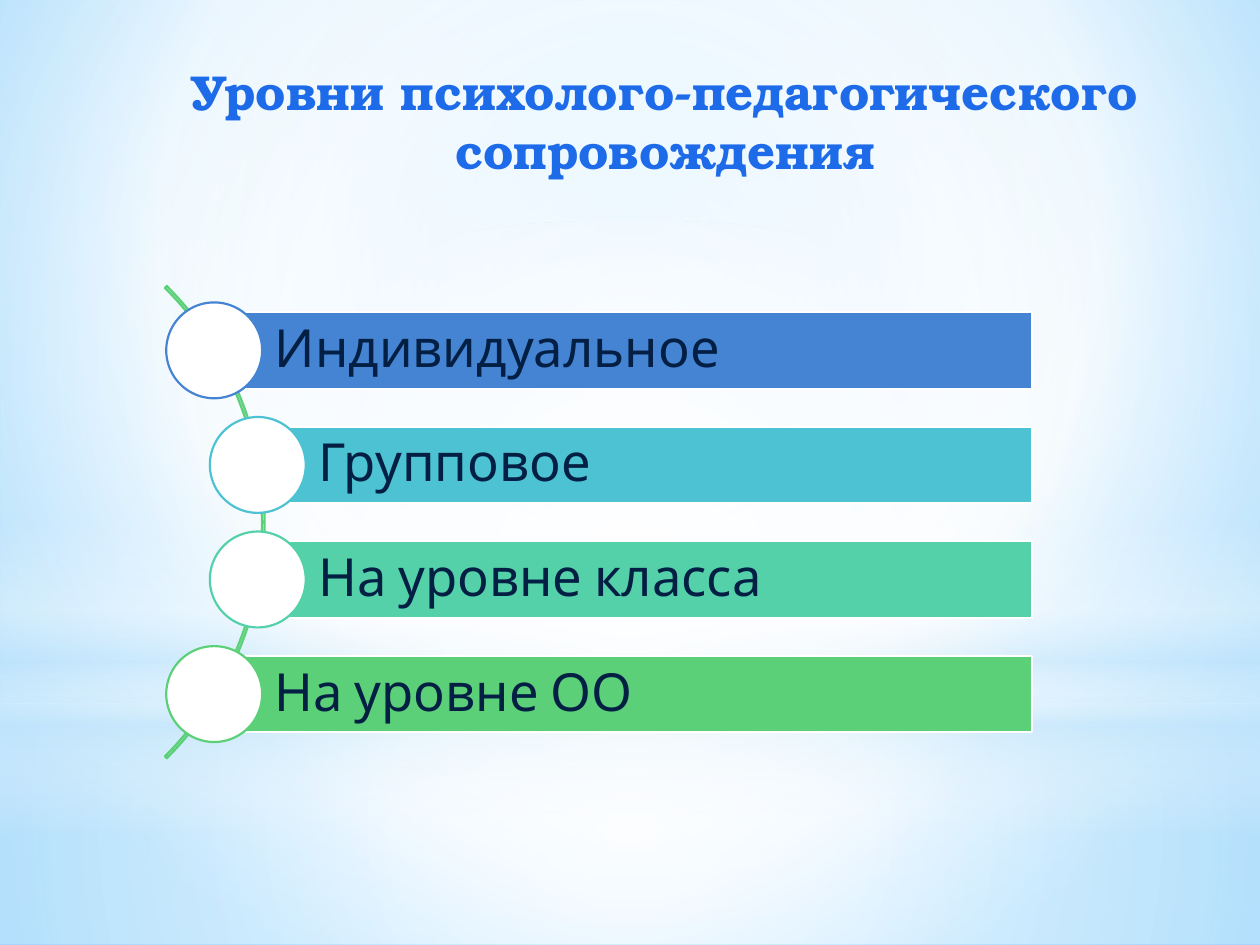
from dataclasses import dataclass

from pptx import Presentation, oxml
from pptx.dml.color import RGBColor
from pptx.enum import shapes, text
from pptx.oxml import ns
from pptx.util import Pt


@dataclass(frozen=True)
class Theme:
    """Colours, fonts and type sizes of the deck."""
    white: str = "FFFFFF"
    haze: str = "C6E7FC"
    sky: str = "B0E0FF"
    deep_sky: str = "6BC5FF"
    title: str = "1D6BE8"
    ink: str = "041F44"
    levels: tuple = ("4584D3", "4CC2D2", "54D1A9", "5BD078")
    title_font: str = "TeX Gyre Bonum"
    body_font: str = "Cabin"
    title_size: int = 28
    body_size: int = 30
    line_width: float = 1.25


@dataclass(frozen=True)
class Box:
    """A rectangle in points."""
    left: float
    top: float
    width: float
    height: float

    def lengths(self):
        """Return the four sides as slide lengths."""
        return [Pt(side) for side in (self.left, self.top, self.width, self.height)]


THEME = Theme()
PAGE = Box(0, 0, 720, 540)
CENTRE = (50, 50, 50, 50)


def paint_gradient(holder, stops, focus=None):
    """Give a shape or slide a radial gradient, or a vertical one without focus."""
    holder_fill = holder.background.fill if hasattr(holder, "background") else holder.fill
    holder_fill.background()
    marks = "".join(
        f'<a:gs pos="{place * 1000}"><a:srgbClr val="{color}">'
        f'<a:alpha val="{opacity * 1000}"/></a:srgbClr></a:gs>'
        for place, color, opacity in stops)
    if focus:
        sides = " ".join(f'{side}="{value * 1000}"' for side, value in zip("ltrb", focus))
        course = f'<a:path path="circle"><a:fillToRect {sides}/></a:path>'
    else:
        course = '<a:lin ang="5400000" scaled="0"/>'
    gradient = oxml.parse_xml(
        f'<a:gradFill {ns.nsdecls("a")} rotWithShape="1">'
        f'<a:gsLst>{marks}</a:gsLst>{course}</a:gradFill>')
    empty = holder.element.find(".//" + ns.qn("a:noFill"))
    empty.getparent().replace(empty, gradient)


def add_outlined(group, kind, box, fill, line):
    """Add a flat shape with an outline and an optional fill."""
    shape = group.shapes.add_shape(kind, *box.lengths())
    shape.shadow.inherit = False
    if fill:
        shape.fill.solid()
        shape.fill.fore_color.rgb = RGBColor.from_string(fill)
    else:
        shape.fill.background()
    shape.line.color.rgb = RGBColor.from_string(line)
    shape.line.width = Pt(THEME.line_width)
    return shape


def add_span(para, words, font, size, color, bold=False):
    """Add one formatted run to a paragraph."""
    span = para.add_run()
    span.text = words
    span.font.name = font
    span.font.size = Pt(size)
    span.font.bold = bold
    span.font.color.rgb = RGBColor.from_string(color)


def draw_backdrop(page, box):
    """Paint the sky, the horizon band and the central glow."""
    white, haze = THEME.white, THEME.haze
    paint_gradient(page, [(0, THEME.sky, 100), (60, white, 100),
                          (100, THEME.deep_sky, 100)], (20, 10, 20, 60))
    horizon = 402
    rectangle, oval = shapes.MSO_SHAPE.RECTANGLE, shapes.MSO_SHAPE.OVAL
    layers = [
        (rectangle, horizon, box.height - horizon, CENTRE,
         [(0, white, 91), (37, white, 76), (100, haze, 79)]),
        (rectangle, 0, horizon, CENTRE,
         [(0, white, 89), (48, white, 62), (100, haze, 79)]),
        (rectangle, 296.6, 180, None,
         [(0, white, 0), (29, white, 30), (45, haze, 40),
          (55, white, 26), (65, haze, 60), (100, white, 0)]),
        (oval, 126, horizon, CENTRE, [(0, white, 100), (56, white, 0)]),
    ]
    for kind, top, height, focus, stops in layers:
        layer = page.shapes.add_shape(
            kind, *Box(box.left, box.top + top, box.width, height).lengths())
        layer.shadow.inherit = False
        paint_gradient(layer, stops, focus)
        layer.line.fill.background()


def place_title(page, box, words):
    """Move the title placeholder to its box, in front of the backdrop."""
    title = page.shapes.title
    title.left, title.top, title.width, title.height = box.lengths()
    page.shapes.element.append(title.element)
    frame = title.text_frame
    frame.word_wrap = True
    frame.auto_size = text.MSO_AUTO_SIZE.NONE
    frame.vertical_anchor = text.MSO_ANCHOR.TOP
    para = frame.paragraphs[0]
    para.alignment = text.PP_ALIGN.CENTER
    add_span(para, words, THEME.title_font, THEME.title_size, THEME.title, True)


def draw_level(group, box, words, color):
    """Draw one labelled bar with a disc centred on its left end."""
    disc = box.height
    bar_height = 43.8
    bar_box = Box(box.left + disc / 2, box.top + (disc - bar_height) / 2,
                  box.width - disc / 2, bar_height)
    bar = add_outlined(group, shapes.MSO_SHAPE.RECTANGLE, bar_box, color, THEME.white)
    frame = bar.text_frame
    frame.word_wrap = True
    frame.vertical_anchor = text.MSO_ANCHOR.MIDDLE
    frame.margin_left = Pt(34.75)
    frame.margin_top = frame.margin_right = frame.margin_bottom = Pt(6)
    para = frame.paragraphs[0]
    para.alignment = text.PP_ALIGN.LEFT
    para.line_spacing = 0.9
    add_span(para, words, THEME.body_font, THEME.body_size, THEME.ink)
    add_outlined(group, shapes.MSO_SHAPE.OVAL,
                 Box(box.left, box.top, disc, disc), THEME.white, color)


def draw_levels(page, box, labels):
    """Draw the arc and the evenly spaced levels that follow it."""
    group = page.shapes.add_group_shape()
    disc, inset, arc_size = 54.8, 24.9, 381.6
    arc_box = Box(box.left - 325.4, box.top + (box.height - arc_size) / 2,
                  arc_size, arc_size)
    arc = add_outlined(group, shapes.MSO_SHAPE.BLOCK_ARC, arc_box,
                       None, THEME.levels[-1])
    for index, value in enumerate((189, 27, 0.004)):
        arc.adjustments[index] = value
    last = len(labels) - 1
    step = (box.height - disc) / last
    for index, (words, color) in enumerate(zip(labels, THEME.levels)):
        shift = inset if 0 < index < last else 0
        level_box = Box(box.left + shift, box.top + index * step,
                        box.width - shift, disc)
        draw_level(group, level_box, words, color)


def main():
    """Build and save the deck."""
    deck = Presentation()
    deck.slide_width, deck.slide_height = Pt(PAGE.width), Pt(PAGE.height)
    page = deck.slides.add_slide(deck.slide_layouts.get_by_name("Title Only"))
    draw_backdrop(page, PAGE)
    place_title(page, Box(93.6, 31.7, 572.4, 90),
                "Уровни психолого-педагогического сопровождения")
    draw_levels(page, Box(95, 172.8, 495, 251.2),
                ["Индивидуальное", "Групповое", "На уровне класса", "На уровне ОО"])
    deck.save("out.pptx")


if __name__ == "__main__":
    main()
